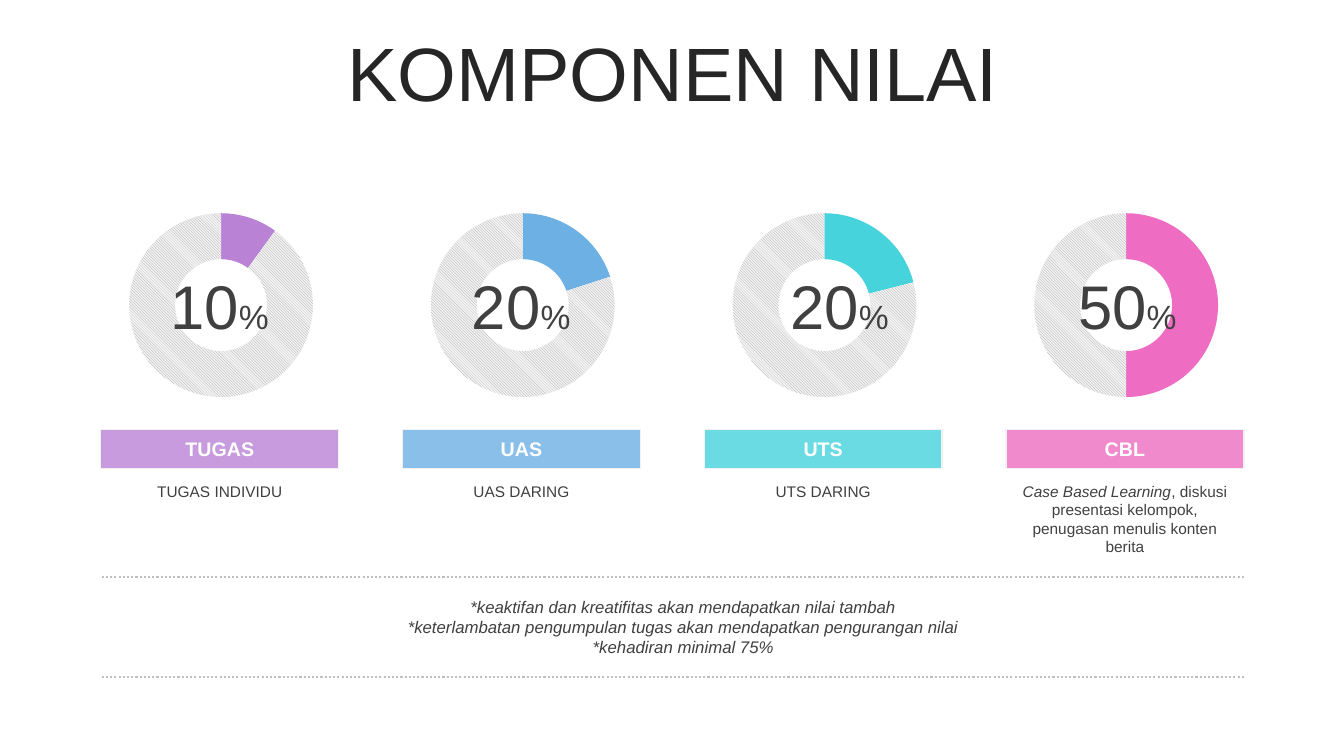
"""Builds the slide on grade components with four doughnut charts."""
import lxml.etree
import pptx
import pptx.chart.data
import pptx.dml.color
import pptx.enum.chart
import pptx.enum.dml
import pptx.enum.shapes
import pptx.enum.text
import pptx.oxml.ns
import pptx.util

Pt = pptx.util.Pt
qn = pptx.oxml.ns.qn
ALIGN = pptx.enum.text.PP_ALIGN
ANCHOR = pptx.enum.text.MSO_ANCHOR

FONT = "Arial"
COLORS = {
    "title": "262626", "text": "404040", "white": "FFFFFF", "black": "000000",
    "rule": "BFBFBF", "border": "F2F2F2", "hatch": "A6A6A6",
    "purple": "B982D5", "blue": "6DB0E4", "teal": "47D3DC", "pink": "EE6CC1",
}
LEFT, PITCH, COLUMN_WIDTH = 72, 215.5, 170
PLOT_LAYOUT = {
    "layoutTarget": "inner", "xMode": "edge", "yMode": "edge",
    "x": "0.152", "y": "0.07", "w": "0.706", "h": "0.86",
}
COMPONENTS = [
    ("TUGAS", "10", 10, "purple", 0, [("TUGAS INDIVIDU", False)]),
    ("UAS", "20", 20, "blue", 0, [("UAS DARING", False)]),
    ("UTS", "20", 21, "teal", 12, [("UTS DARING", False)]),
    ("CBL", "50", 50, "pink", 2, [
        ("Case Based Learning", True),
        (", diskusi presentasi kelompok, penugasan menulis konten berita", False),
    ]),
]
NOTES = [
    "*keaktifan dan kreatifitas akan mendapatkan nilai tambah",
    "*keterlambatan pengumpulan tugas akan mendapatkan pengurangan nilai",
    "*kehadiran minimal 75%",
]


def rgb(name):
    return pptx.dml.color.RGBColor.from_string(COLORS[name])


def style(font, size, color):
    font.name, font.size = FONT, Pt(size)
    font.color.rgb = rgb(color)


def add_text(slide, box, lines, size, color="text", align=ALIGN.CENTER,
             anchor=ANCHOR.TOP, wrap=True):
    """Adds a text box; each line is a list of text pieces."""
    frame = slide.shapes.add_textbox(*map(Pt, box)).text_frame
    frame.word_wrap, frame.vertical_anchor = wrap, anchor
    for index, pieces in enumerate(lines):
        paragraph = frame.add_paragraph() if index else frame.paragraphs[0]
        paragraph.alignment = align
        style(paragraph.font, size, color)
        for piece in pieces:
            paragraph.add_run().text = piece
    return frame.paragraphs


def add_doughnut(slide, left, share, color):
    data = pptx.chart.data.CategoryChartData()
    data.categories = ["1", "2"]
    data.add_series("Series 1", (share, 100 - share))
    chart = slide.shapes.add_chart(
        pptx.enum.chart.XL_CHART_TYPE.DOUGHNUT,
        Pt(left), Pt(118), Pt(186), Pt(200), data).chart
    chart.has_legend = chart.has_title = False
    style(chart.font, 18, "black")
    plot = chart.plots[0]
    plot.has_data_labels = False
    plot.vary_by_categories = True
    portion, remainder = (plot.series[0].points[i].format for i in range(2))
    portion.fill.solid()
    portion.fill.fore_color.rgb = rgb(color)
    remainder.fill.patterned()
    remainder.fill.pattern = pptx.enum.dml.MSO_PATTERN.LIGHT_DOWNWARD_DIAGONAL
    remainder.fill.fore_color.rgb = rgb("hatch")
    remainder.fill.back_color.rgb = rgb("border")
    for part in (portion, remainder):
        part.line.fill.background()

    plot_area = next(chart.element.iter(qn("c:plotArea")))
    next(plot_area.iter(qn("c:holeSize"))).set("val", "84")
    for layout in plot_area.findall(qn("c:layout")):
        plot_area.remove(layout)
    layout = lxml.etree.Element(qn("c:layout"))
    manual = lxml.etree.SubElement(layout, qn("c:manualLayout"))
    for tag, value in PLOT_LAYOUT.items():
        lxml.etree.SubElement(manual, qn("c:" + tag)).set("val", value)
    plot_area.insert(0, layout)


def add_banner(slide, left, label, color):
    banner = slide.shapes.add_shape(
        pptx.enum.shapes.MSO_SHAPE.RECTANGLE,
        Pt(left), Pt(306.7), Pt(COLUMN_WIDTH), Pt(28))
    banner.shadow.inherit = False
    banner.fill.solid()
    banner.fill.fore_color.rgb = rgb(color)
    tint = next(banner.element.spPr.iter(qn("a:srgbClr")))
    lxml.etree.SubElement(tint, qn("a:alpha")).set("val", "80000")
    banner.line.color.rgb = rgb("border")
    banner.line.width = Pt(1)
    banner.text_frame.text = label
    banner.text_frame.vertical_anchor = ANCHOR.MIDDLE
    paragraph = banner.text_frame.paragraphs[0]
    paragraph.alignment = ALIGN.CENTER
    style(paragraph.font, 14, "white")
    paragraph.font.bold = True


def add_rule(slide, top):
    rule = slide.shapes.add_connector(
        pptx.enum.shapes.MSO_CONNECTOR.STRAIGHT,
        Pt(72.7), Pt(top), Pt(889), Pt(top))
    rule.line.color.rgb = rgb("rule")
    rule.line.width = Pt(1.5)
    rule.line.dash_style = pptx.enum.dml.MSO_LINE.ROUND_DOT
    lxml.etree.SubElement(rule.element.spPr, qn("a:effectLst"))


def add_component(slide, left, component):
    label, number, share, color, shift, description = component
    add_doughnut(slide, left - 8, share, color)
    add_banner(slide, left, label, color)
    percentage = add_text(slide, (left + 42.5 + shift, 188, 85.7, 60.5),
                          [[number, "%"]], 44, align=ALIGN.LEFT, wrap=False)
    percentage[0].runs[1].font.size = Pt(24)
    caption = add_text(slide, (left, 340.6, COLUMN_WIDTH, 21),
                       [[piece for piece, _ in description]], 11)
    for run, (_, italic) in zip(caption[0].runs, description):
        run.font.italic = italic


def main():
    deck = pptx.Presentation()
    deck.slide_width, deck.slide_height = Pt(960), Pt(540)
    slide = deck.slides.add_slide(deck.slide_layouts[6])
    title = add_text(slide, (25, 26.6, 911.5, 57), [["KOMPONEN NILAI"]],
                     54, "title", anchor=ANCHOR.MIDDLE)[0]
    title.line_spacing, title.space_before = 0.9, Pt(10)
    for index, component in enumerate(COMPONENTS):
        add_component(slide, LEFT + index * PITCH, component)
    for note in add_text(slide, (93.6, 422.6, 789, 51),
                         [[note] for note in NOTES], 12):
        note.font.italic = True
    for top in (412, 483.3):
        add_rule(slide, top)
    deck.save("out.pptx")


if __name__ == "__main__":
    main()
